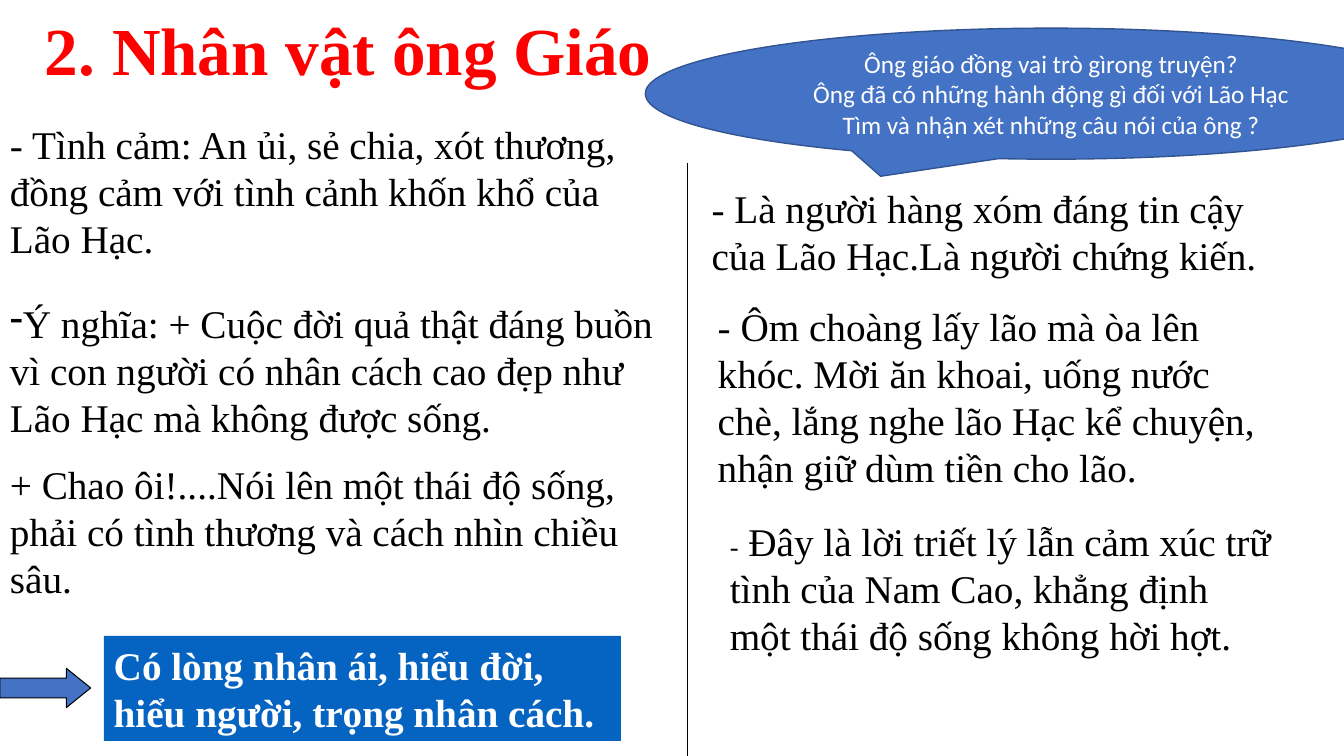
"""Builds the slide about the character of the teacher."""
from dataclasses import dataclass

from lxml import etree
from pptx import Presentation, util as u
from pptx.dml.color import RGBColor
from pptx.enum import shapes, text
from pptx.oxml.ns import qn

TITLE = "2. Nhân vật ông Giáo"
NOTES = [
    ((0, 1.14, 6.61, 1.51),
     ["- Tình cảm: An ủi, sẻ chia, xót thương, đồng cảm với tình cảnh khốn khổ của Lão Hạc."], ""),
    ((0, 2.92, 6.82, 3.16),
     ["Ý nghĩa: + Cuộc đời quả thật đáng buồn vì con người có nhân cách cao đẹp như "
      "Lão Hạc mà không được sống.",
      "+ Chao ôi!....Nói lên một thái độ sống, phải có tình thương và cách nhìn chiều sâu."], "-"),
    ((6.96, 1.78, 5.87, 1.04),
     ["- Là người hàng xóm đáng tin cậy của Lão Hạc.Là người chứng kiến."], ""),
    ((7.02, 2.95, 5.81, 1.98),
     ["- Ôm choàng lấy lão mà òa lên khóc. Mời ăn khoai, uống nước chè, lắng nghe lão Hạc "
      "kể chuyện, nhận giữ dùm tiền cho lão."], ""),
    ((7.14, 5.08, 5.57, 1.51),
     [[("-", 19), (" Đây là lời triết lý lẫn cảm xúc trữ tình của Nam Cao, khẳng định một "
                   "thái độ sống không hời hợt.", 28)]], ""),
]
CONCLUSION = ["Có lòng nhân ái, hiểu đời, hiểu người, trọng nhân cách."]
QUESTIONS = [
    "Ông giáo đồng vai trò gìrong truyện?",
    "Ông đã có những hành động gì đối với Lão Hạc",
    "Tìm và nhận xét những câu nói của ông ?",
]


@dataclass(frozen=True)
class Theme:
    """Colours, fonts and type sizes."""
    ink: str = "000000"
    light: str = "FFFFFF"
    title: str = "FF0000"
    accent: str = "4472C4"
    accent_edge: str = "325491"
    panel: str = "0563C1"
    serif: str = "Times New Roman"
    sans: str = "Calibri"
    title_size: int = 48
    body_size: int = 28
    question_size: int = 18
    gap: int = 14


THEME = Theme()


def write(box, lines, size=THEME.body_size, font=THEME.serif, color=THEME.ink, bold=False,
          align=text.PP_ALIGN.LEFT, anchor=text.MSO_ANCHOR.TOP, gap=THEME.gap, bullet="", grow=True):
    """Fill a shape with paragraphs, each a string or a list of (text, size) spans."""
    frame = box.text_frame
    frame.word_wrap = True
    frame.vertical_anchor = anchor
    frame.auto_size = text.MSO_AUTO_SIZE.SHAPE_TO_FIT_TEXT if grow else text.MSO_AUTO_SIZE.NONE
    for index, line in enumerate(lines):
        para = frame.add_paragraph() if index else frame.paragraphs[0]
        para.alignment = align
        para.space_before = u.Pt(gap if index else 0)
        for words, points in [(line, size)] if isinstance(line, str) else line:
            span = para.add_run()
            span.text = words
            span.font.name, span.font.size, span.font.bold = font, u.Pt(points), bold
            span.font.color.rgb = RGBColor.from_string(color)
    if bullet:
        properties = frame.paragraphs[0]._p.get_or_add_pPr()
        properties.set("marL", "0")
        properties.set("indent", "0")
        etree.SubElement(properties, qn("a:buChar")).set("char", bullet)


def place(box, area):
    """Set the left, top, width and height of a shape in inches."""
    box.left, box.top, box.width, box.height = map(u.Inches, area)


def add_figure(page, kind, area, fill, edge=None, weight=0.75, adjust=()):
    """Add a filled preset shape."""
    figure = page.shapes.add_shape(kind, *map(u.Inches, area))
    figure.shadow.inherit = False
    figure.fill.solid()
    figure.fill.fore_color.rgb = RGBColor.from_string(fill)
    if edge:
        figure.line.color.rgb = RGBColor.from_string(edge)
        figure.line.width = u.Pt(weight)
    else:
        figure.line.fill.background()
    for index, value in enumerate(adjust):
        figure.adjustments[index] = value
    return figure


def add_divider(page, x, top, bottom):
    """Add the vertical line between the two columns."""
    line = page.shapes.add_connector(shapes.MSO_CONNECTOR.STRAIGHT,
                                     *map(u.Inches, (x, top, x, bottom)))
    line.line.color.rgb = RGBColor.from_string(THEME.ink)
    line.line.width = u.Pt(0.75)
    etree.SubElement(line._element.spPr, qn("a:effectLst"))


def main():
    """Build and save the deck."""
    deck = Presentation()
    deck.slide_width, deck.slide_height = u.Inches(13.33), u.Inches(7.5)
    page = deck.slides.add_slide(deck.slide_layouts[5])
    kinds = shapes.MSO_SHAPE

    title = page.shapes.title
    place(title, (-0.57, 0.16, 8.05, 0.85))
    title.text_frame.margin_bottom = u.Inches(0.25)
    write(title, [TITLE], size=THEME.title_size, color=THEME.title, bold=True, grow=False,
          align=text.PP_ALIGN.CENTER, anchor=text.MSO_ANCHOR.MIDDLE)

    add_divider(page, 6.82, 1.62, 7.5)
    for area, lines, bullet in NOTES:
        write(page.shapes.add_textbox(*map(u.Inches, area)), lines, bullet=bullet)

    add_figure(page, kinds.RIGHT_ARROW, (0, 6.63, 0.9, 0.39), THEME.accent, THEME.ink,
               adjust=(0.5, 0.62))
    panel = add_figure(page, kinds.RECTANGLE, (1.03, 6.31, 5.13, 1.04), THEME.panel)
    write(panel, CONCLUSION, color=THEME.light, bold=True)

    callout = add_figure(page, kinds.OVAL_CALLOUT, (6.4, 0.28, 8.05, 1.3), THEME.accent,
                         THEME.accent_edge, weight=1, adjust=(-0.21, 0.63))
    write(callout, QUESTIONS, size=THEME.question_size, font=THEME.sans, color=THEME.light,
          align=text.PP_ALIGN.CENTER, anchor=text.MSO_ANCHOR.MIDDLE, gap=0, grow=False)

    deck.save("out.pptx")


if __name__ == "__main__":
    main()
